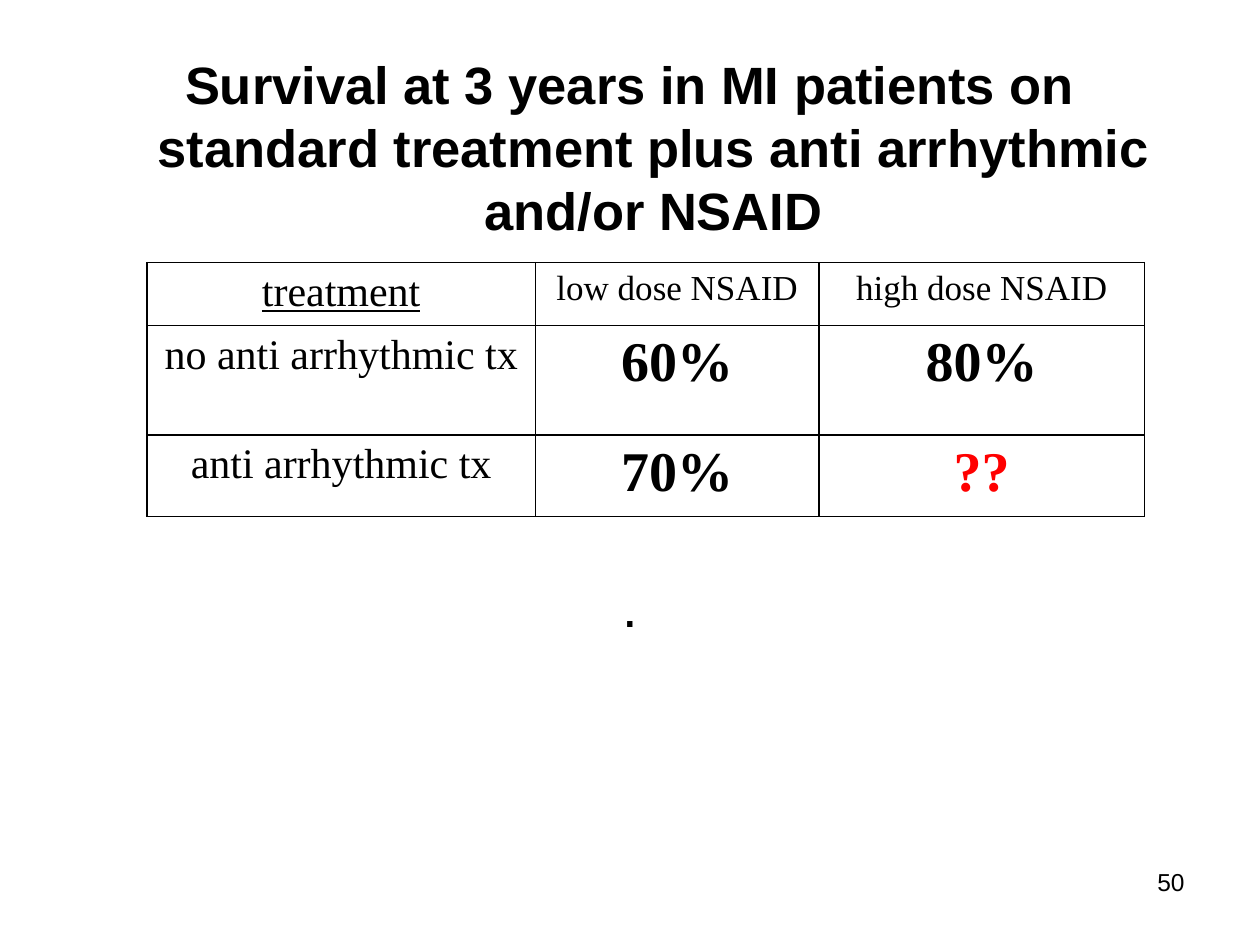
from dataclasses import dataclass
from typing import Optional

from lxml.etree import SubElement
from pptx import Presentation
from pptx.dml.color import RGBColor
from pptx.enum.text import PP_ALIGN as Align
from pptx.oxml.ns import qn
from pptx.util import Pt


@dataclass(frozen=True)
class Theme:
    ink: str = "000000"
    alert: str = "FF0000"
    sans: str = "Arial"
    serif: str = "Times New Roman"
    title: float = 30
    result: float = 32
    label: float = 24
    column: float = 20
    page: float = 14
    border: float = 1


THEME = Theme()


@dataclass(frozen=True)
class Style:
    size: float
    font: str = THEME.serif
    bold: bool = False
    underline: bool = False
    color: str = THEME.ink


@dataclass(frozen=True)
class Entry:
    text: str
    style: Style


@dataclass(frozen=True)
class Box:
    left: float
    top: float
    width: float
    height: float

    def lengths(self) -> tuple:
        return Pt(self.left), Pt(self.top), Pt(self.width), Pt(self.height)


def write(p, entry: Entry, align=Align.CENTER) -> None:
    p.alignment = align
    r = p.add_run()
    r.text = entry.text
    style, font = entry.style, r.font
    font.name, font.size = style.font, Pt(style.size)
    font.bold, font.underline = style.bold, style.underline
    font.color.rgb = RGBColor.from_string(style.color)


def add_text_frame(s, box: Box):
    tf = s.shapes.add_textbox(*box.lengths()).text_frame
    tf.word_wrap = True
    return tf


def hang(p, indent: float) -> None:
    pPr = p._p.get_or_add_pPr()
    pPr.set("marL", str(Pt(indent)))
    pPr.set("indent", str(Pt(-indent)))


def add_borders(cell) -> None:
    tcPr = cell._tc.get_or_add_tcPr()
    for i, side in enumerate(("lnL", "lnR", "lnT", "lnB")):
        ln = tcPr.makeelement(qn(f"a:{side}"), {"w": str(Pt(THEME.border))})
        fill = SubElement(ln, qn("a:solidFill"))
        SubElement(fill, qn("a:srgbClr"), val=THEME.ink)
        tcPr.insert(i, ln)  # borders come before the fill


def add_grid(s, box: Box, widths: list[float], heights: list[float],
             rows: list[list[Entry]]) -> None:
    table = s.shapes.add_table(len(heights), len(widths), *box.lengths()).table
    table.first_row = table.horz_banding = False
    for column, width in zip(table.columns, widths):
        column.width = Pt(width)
    for row, height, entries in zip(table.rows, heights, rows):
        row.height = Pt(height)
        for cell, entry in zip(row.cells, entries):
            cell.fill.background()
            add_borders(cell)
            write(cell.text_frame.paragraphs[0], entry)


def add_body(s, box: Box, title: Entry, mark: Entry, gap: float) -> None:
    tf = add_text_frame(s, box)
    tf.margin_top = Pt(5.8)
    p = tf.paragraphs[0]
    hang(p, 27)
    p.line_spacing = Pt(36)
    write(p, title)
    p = tf.add_paragraph()
    hang(p, 27)
    p.space_before = Pt(gap)
    write(p, mark)


def result_row(label: str, low: str, high: str,
               high_color: Optional[str] = None) -> list[Entry]:
    size = THEME.result
    return [
        Entry(label, Style(THEME.label)),
        Entry(low, Style(size, bold=True)),
        Entry(high, Style(size, bold=True, color=high_color or THEME.ink)),
    ]


def main() -> None:
    prs = Presentation()
    prs.slide_width, prs.slide_height = Pt(720), Pt(540)
    s = prs.slides.add_slide(prs.slide_layouts[6])

    # Title, with the lone point below the table
    add_body(
        s, Box(36, 24, 648, 458.6),
        Entry("Survival at 3 years in MI patients on standard treatment plus "
              "anti arrhythmic and/or NSAID",
              Style(THEME.title, THEME.sans, bold=True)),
        Entry(".", Style(THEME.result, THEME.sans)),
        gap=189,
    )

    # Survival table
    column = Style(THEME.column)
    widths, heights = [222, 162, 186], [36, 62.5, 46.5]
    add_grid(
        s, Box(84, 150, sum(widths), sum(heights)), widths, heights,
        [
            [Entry("treatment", Style(THEME.label, underline=True)),
             Entry("low dose NSAID", column),
             Entry("high dose NSAID", column)],
            result_row("no anti arrhythmic tx", "60%", "80%"),
            result_row("anti arrhythmic tx", "70%", "??", THEME.alert),
        ],
    )

    # Page number
    tf = add_text_frame(s, Box(516, 492, 168, 37.5))
    write(tf.paragraphs[0], Entry("50", Style(THEME.page, THEME.sans)),
          Align.RIGHT)

    prs.save("out.pptx")


if __name__ == "__main__":
    main()
